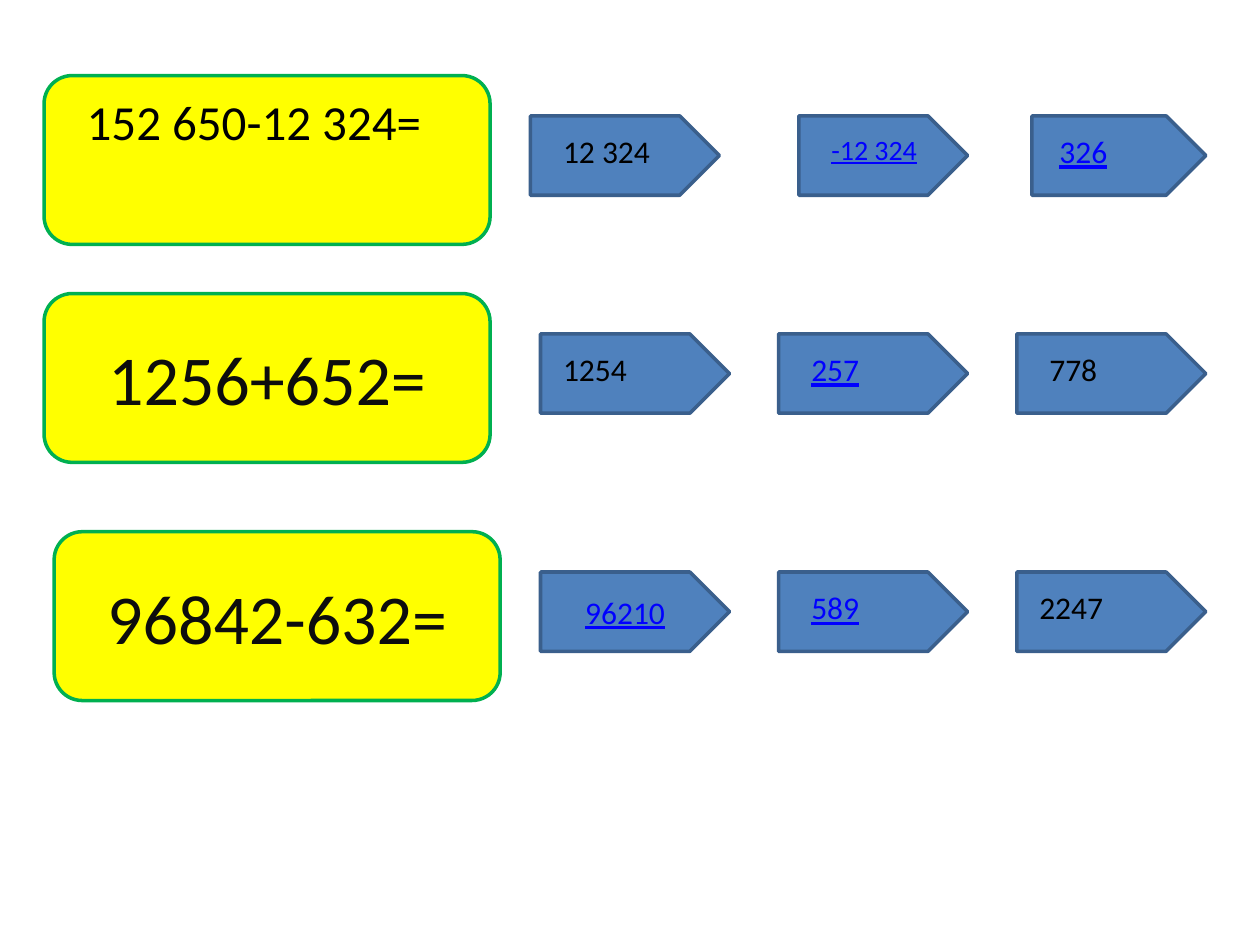
from pptx import Presentation
from pptx.dml.color import RGBColor
from pptx.enum.shapes import MSO_SHAPE as Shape
from pptx.enum.text import MSO_ANCHOR as Anchor, MSO_AUTO_SIZE as AutoSize, PP_ALIGN as Align
from pptx.util import Inches, Pt

INK, DARK, LINK = "000000", "0D0D0D", "0000FF"
CARD_STYLE = (Shape.ROUNDED_RECTANGLE, "FFFF00", "00B050")
ANSWER_STYLE = (Shape.PENTAGON, "4F81BD", "3A5F8C")

PLAIN = {"size": 18, "color": INK, "underline": False}
LINKED = {"size": 18, "color": LINK, "underline": True}
SMALL_LINKED = {**LINKED, "size": 16}
PROBLEM = {"size": 40, "color": DARK, "underline": False}
HEADING = {**PLAIN, "size": 28}

CARD_W, CARD_H = 3.54, 1.34
ANSWER_W, ANSWER_H = 1.5, 0.63
ANSWER_LEFT, ANSWER_STEP = 4.29, 1.89
ANSWER_DROP, LABEL_DROP = 0.32, 0.4

FIRST_PROBLEM = ("152 650-12 324=", (0.59, 0.68, 3.07, 0.57))

ROWS = [
    {"top": 0.6, "left": 0.35, "problem": None, "answers": [
        {"text": "12 324", "format": PLAIN, "shift": -0.08, "inset": 0.16},
        {"text": "-12 324", "format": SMALL_LINKED, "shift": 0.16, "width": 1.34,
         "inset": 0.16, "label": (0.94, 0.37)},
        {"text": "326", "format": LINKED, "shift": 0.12, "width": 1.38,
         "inset": 0.12, "label": (0.94, 0.4)},
    ]},
    {"top": 2.33, "left": 0.35, "problem": "1256+652=", "answers": [
        {"text": "1254", "format": PLAIN, "inset": 0.08},
        {"text": "257", "format": LINKED, "inset": 0.16},
        {"text": "778", "format": PLAIN, "inset": 0.16},
    ]},
    {"top": 4.22, "left": 0.43, "problem": "96842-632=", "answers": [
        {"text": "96210", "format": LINKED},
        {"text": "589", "format": LINKED, "inset": 0.16},
        {"text": "2247", "format": PLAIN, "inset": 0.08},
    ]},
]


def rgb(value):
    return RGBColor.from_string(value)


def write(frame, text, style, align=Align.LEFT):
    paragraph = frame.paragraphs[0]
    paragraph.alignment = align
    run = paragraph.add_run()
    run.text = text
    values = {"name": "Calibri", "size": Pt(style["size"]), "underline": style["underline"]}
    for name, value in values.items():
        setattr(run.font, name, value)
    run.font.color.rgb = rgb(style["color"])


def add_panel(slide, style, box, text=None, text_style=None):
    kind, fill, border = style
    panel = slide.shapes.add_shape(kind, *map(Inches, box))
    panel.shadow.inherit = False
    panel.fill.solid()
    panel.fill.fore_color.rgb = rgb(fill)
    panel.line.color.rgb = rgb(border)
    panel.line.width = Pt(2)
    if text:
        panel.text_frame.vertical_anchor = Anchor.MIDDLE
        write(panel.text_frame, text, text_style, Align.CENTER)


def add_label(slide, box, text, style):
    frame = slide.shapes.add_textbox(*map(Inches, box)).text_frame
    frame.word_wrap = True
    frame.auto_size = AutoSize.SHAPE_TO_FIT_TEXT
    write(frame, text, style)


def add_answer(slide, column, top, answer):
    left = ANSWER_LEFT + column * ANSWER_STEP + answer.get("shift", 0)
    box = (left, top + ANSWER_DROP, answer.get("width", ANSWER_W), ANSWER_H)
    if "inset" not in answer:
        add_panel(slide, ANSWER_STYLE, box, answer["text"], answer["format"])
        return
    add_panel(slide, ANSWER_STYLE, box)
    label_box = (left + answer["inset"], top + LABEL_DROP, *answer.get("label", (1.02, 0.4)))
    add_label(slide, label_box, answer["text"], answer["format"])


def main():
    deck = Presentation()
    deck.slide_width, deck.slide_height = Inches(10), Inches(7.5)
    slide = deck.slides.add_slide(deck.slide_layouts[6])
    for row in ROWS:
        card_box = (row["left"], row["top"], CARD_W, CARD_H)
        add_panel(slide, CARD_STYLE, card_box, row["problem"], PROBLEM)
        for column, answer in enumerate(row["answers"]):
            add_answer(slide, column, row["top"], answer)
    heading, heading_box = FIRST_PROBLEM
    add_label(slide, heading_box, heading, HEADING)
    deck.save("out.pptx")


if __name__ == "__main__":
    main()
